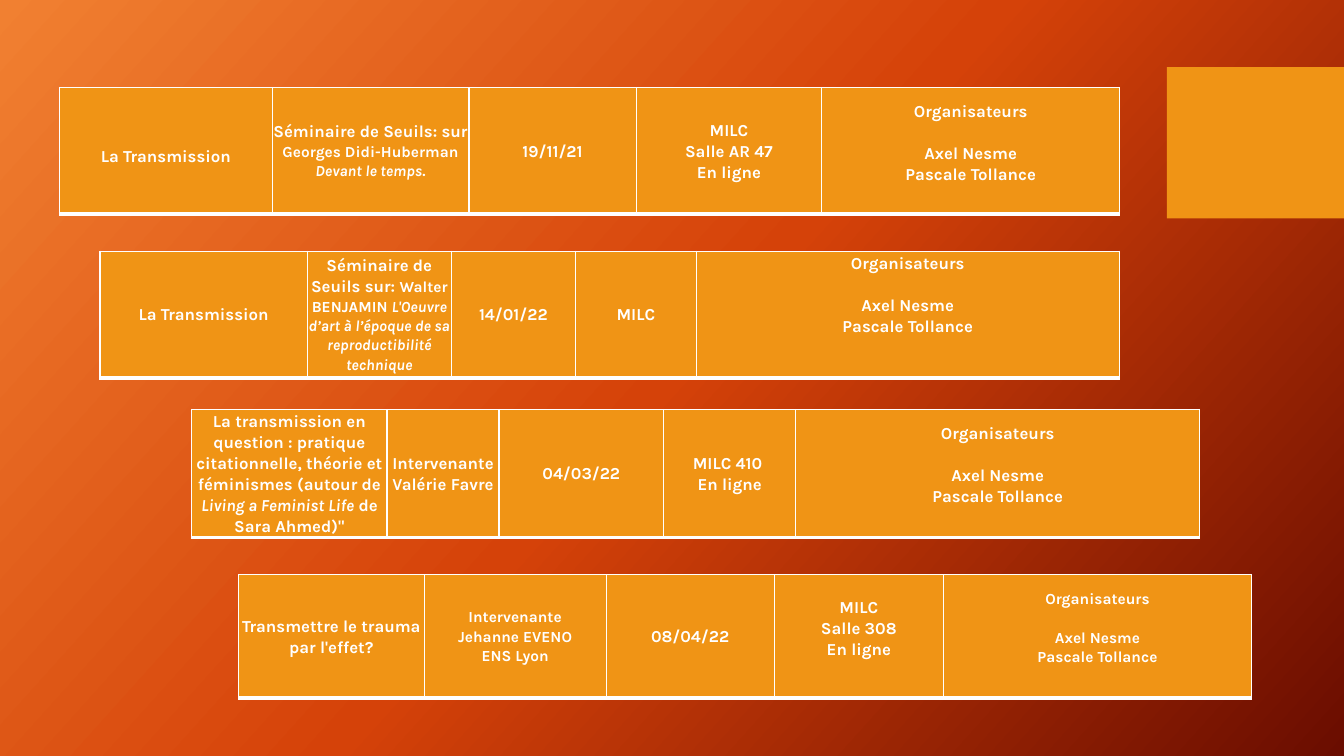
from copy import deepcopy

from lxml import etree
from pptx import Presentation
from pptx.dml.color import RGBColor
from pptx.enum.shapes import MSO_SHAPE
from pptx.enum.text import MSO_ANCHOR, PP_ALIGN
from pptx.oxml.ns import qn
from pptx.util import Pt

RECTANGLE = MSO_SHAPE.RECTANGLE
MIDDLE = MSO_ANCHOR.MIDDLE
CENTER = PP_ALIGN.CENTER

ORANGE = "F09415"
WHITE = "FFFFFF"
GRADIENT = [(0, "F18031"), (0.5, "D54209"), (1, "6A0D00")]
GRADIENT_ANGLE = 318
CELL_INSET = 0.7
BORDERS = {"lnL": 1, "lnR": 1, "lnT": 1, "lnB": 3}


def color(value):
    return RGBColor.from_string(value)


def apply_format(target, values):
    for name, value in values.items():
        setattr(target, name, value)


def text_cell(*lines, size=12, top=0, bottom=0, gap=0):
    """Each line is a string or a list of (text, size, italic) runs.
    top and bottom are extra insets; gap follows the first line."""
    runs = [[(line, size, False)] if isinstance(line, str) else line
            for line in lines]
    return {"lines": runs, "top": top, "bottom": bottom, "gap": gap}


def organisers(size=12, bottom=12):
    return text_cell("Organisateurs", "Axel Nesme", "Pascale Tollance",
                     size=size, bottom=bottom, gap=size * 1.25)


# One entry per session: box (left, top, height), column widths, cells
SESSIONS = [
    {"box": (42.5, 62.5, 90.5),
     "columns": [152, 140.5, 119.5, 132.5, 213],
     "cells": [
         text_cell("La Transmission", top=8),
         text_cell([("Séminaire de Seuils: sur ", 12, False),
                    ("Georges Didi-Huberman ", 11, False),
                    ("Devant le temps", 11, True), (".", 11, False)]),
         text_cell("19/11/21"),
         text_cell("MILC", "Salle AR 47", "En ligne"),
         organisers()]},
    {"box": (71.5, 179.5, 90),
     "columns": [148, 103, 88.5, 86.5, 302],
     "cells": [
         text_cell("La Transmission"),
         text_cell([("Séminaire de Seuils sur: ", 12, False),
                    ("Walter BENJAMIN ", 11, False),
                    ("L'Oeuvre d’art à l’époque de sa "
                     "reproductibilité technique", 11, True)]),
         text_cell("14/01/22"),
         text_cell("MILC"),
         organisers(bottom=29)]},
    {"box": (137, 292.5, 90.5),
     "columns": [139.5, 80, 117.5, 94.5, 288.5],
     "cells": [
         text_cell([("La transmission en question : pratique "
                     "citationnelle, théorie et féminismes "
                     "(autour de ", 12, False),
                    ("Living a Feminist Life", 12, True),
                    (" de Sara Ahmed)\"", 12, False)]),
         text_cell("Intervenante", "Valérie Favre"),
         text_cell("04/03/22"),
         text_cell("MILC 410 ", "En ligne"),
         organisers()]},
    {"box": (170.5, 410.5, 88),
     "columns": [132.5, 130, 120, 121, 220],
     "cells": [
         text_cell("Transmettre le trauma par l'effet?"),
         text_cell("Intervenante", "Jehanne EVENO", "ENS Lyon", size=11),
         text_cell("08/04/22"),
         text_cell("MILC", "Salle 308", "En ligne", bottom=12),
         organisers(size=11)]},
]


def paint_background(slide):
    fill = slide.background.fill
    fill.gradient()
    fill.gradient_angle = GRADIENT_ANGLE
    stop_list = slide.element.find(".//" + qn("a:gsLst"))
    stop_list.append(deepcopy(stop_list[-1]))
    for stop, (position, value) in zip(fill.gradient_stops, GRADIENT):
        stop.position = position
        stop.color.rgb = color(value)


def add_side_block(slide, left, top, width, height):
    shape = slide.shapes.add_shape(RECTANGLE, Pt(left), Pt(top),
                                   Pt(width), Pt(height))
    shape.shadow.inherit = False
    shape.fill.solid()
    shape.fill.fore_color.rgb = color(ORANGE)
    shape.line.fill.background()


def set_borders(cell):
    properties = cell._tc.get_or_add_tcPr()
    for index, (tag, width) in enumerate(BORDERS.items()):
        line = etree.Element(qn("a:" + tag), w=str(Pt(width)))
        fill = etree.SubElement(line, qn("a:solidFill"))
        etree.SubElement(fill, qn("a:srgbClr"), val=WHITE)
        properties.insert(index, line)


def fill_cell(cell, content):
    apply_format(cell, {
        "vertical_anchor": MIDDLE,
        "margin_left": Pt(CELL_INSET),
        "margin_right": Pt(CELL_INSET),
        "margin_top": Pt(CELL_INSET + content["top"]),
        "margin_bottom": Pt(CELL_INSET + content["bottom"])})
    cell.fill.solid()
    cell.fill.fore_color.rgb = color(ORANGE)
    set_borders(cell)
    frame = cell.text_frame
    for index, line in enumerate(content["lines"]):
        paragraph = frame.add_paragraph() if index else frame.paragraphs[0]
        gap = 0 if index else content["gap"]
        apply_format(paragraph, {"alignment": CENTER, "line_spacing": 1.07,
                                 "space_after": Pt(gap)})
        for text, size, italic in line:
            run = paragraph.add_run()
            run.text = text
            apply_format(run.font, {"name": "Karla", "size": Pt(size),
                                    "bold": True, "italic": italic})
            run.font.color.rgb = color(WHITE)


def add_session(slide, box, columns, cells):
    left, top, height = box
    table = slide.shapes.add_table(1, len(columns), Pt(left), Pt(top),
                                   Pt(sum(columns)), Pt(height)).table
    apply_format(table, {"first_row": False, "horz_banding": False})
    for index, (width, content) in enumerate(zip(columns, cells)):
        table.columns[index].width = Pt(width)
        fill_cell(table.cell(0, index), content)


def main():
    presentation = Presentation()
    presentation.slide_width = Pt(960)
    presentation.slide_height = Pt(540)
    slide = presentation.slides.add_slide(presentation.slide_layouts[6])

    # Backdrop
    paint_background(slide)
    add_side_block(slide, 833.5, 48, 126.5, 108)

    # Seminar sessions, stepped to the right
    for session in SESSIONS:
        add_session(slide, **session)

    presentation.save("out.pptx")


if __name__ == "__main__":
    main()
